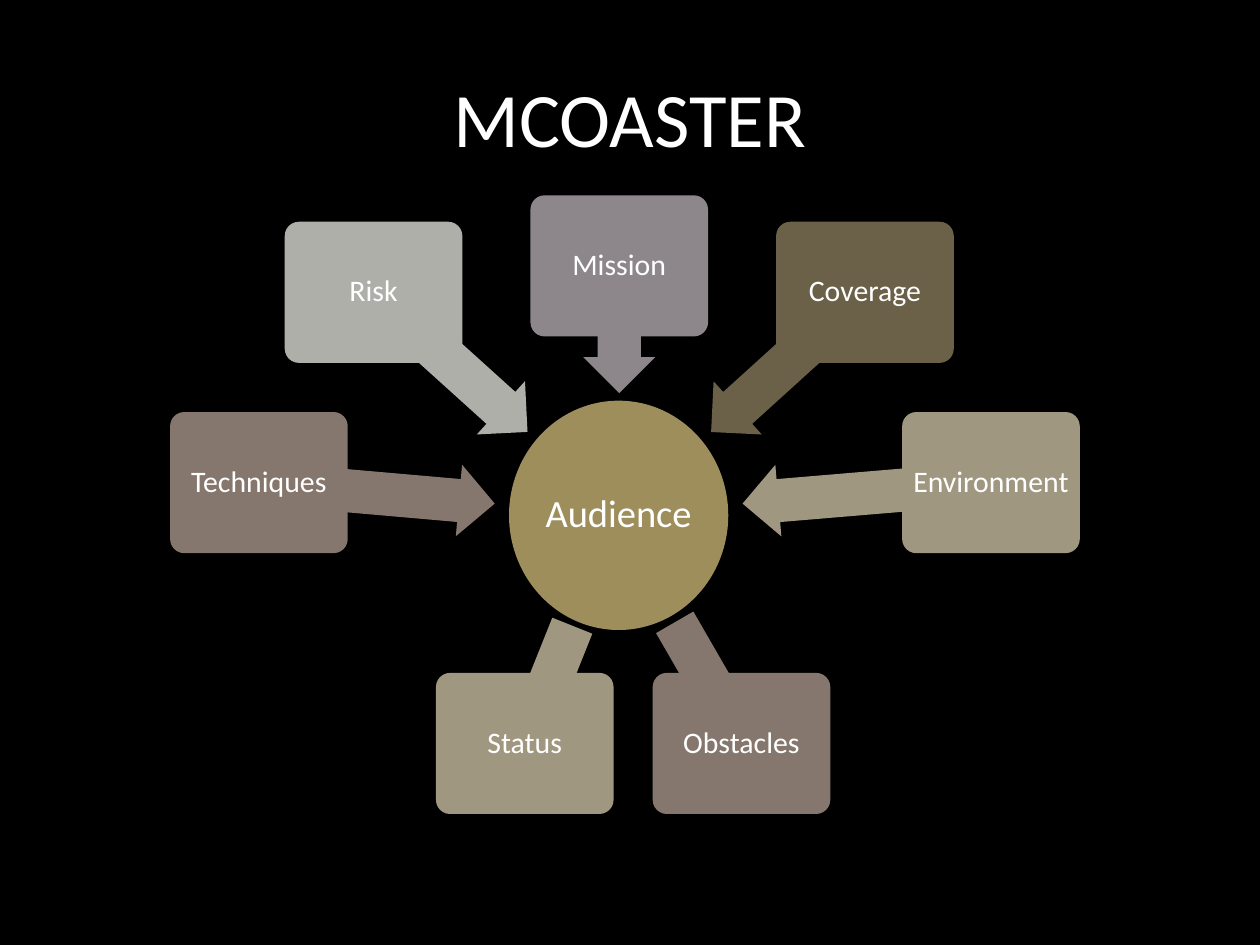
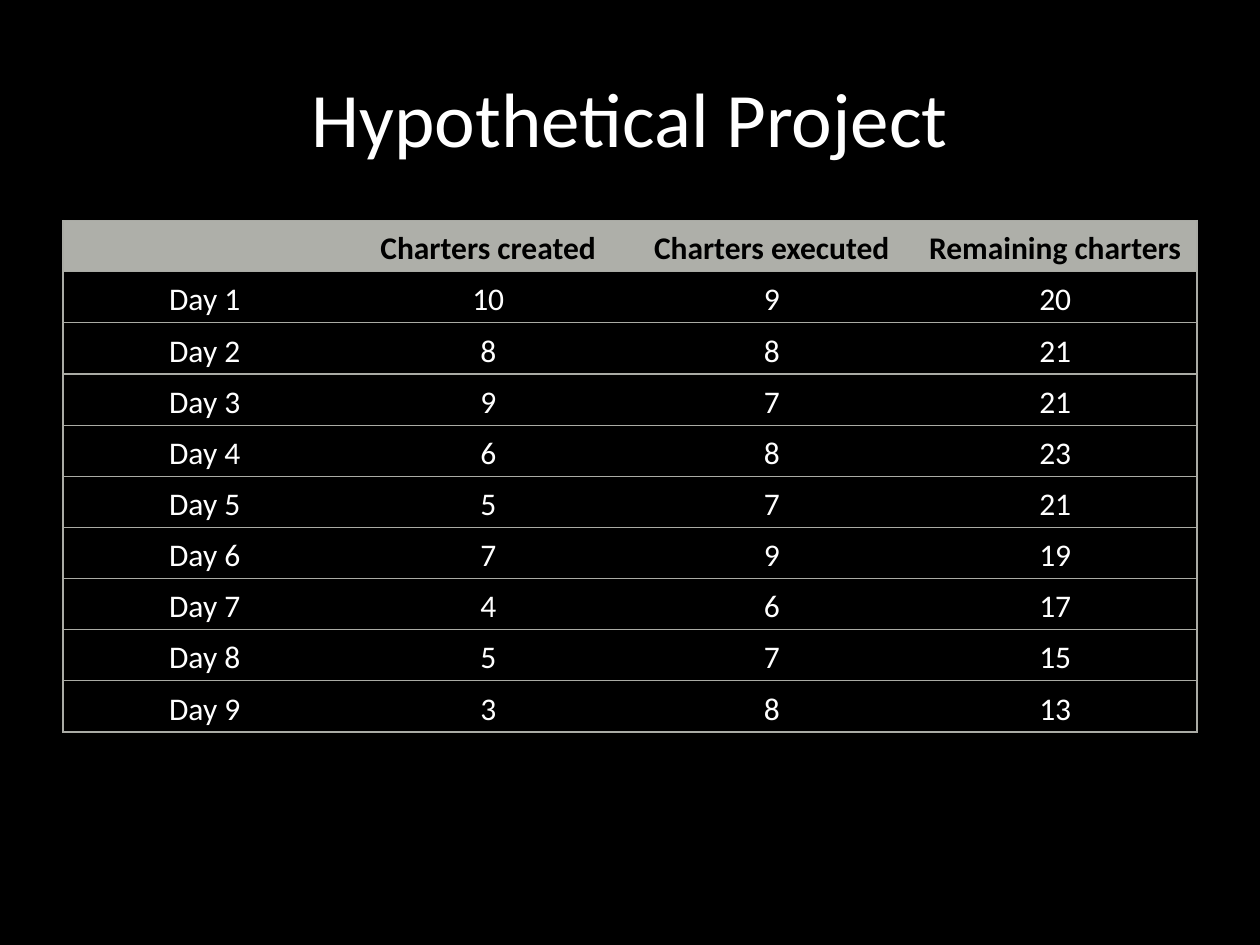
from dataclasses import dataclass

from lxml import etree
from pptx import Presentation
from pptx.dml.color import RGBColor
from pptx.enum.shapes import MSO_SHAPE
from pptx.enum.text import MSO_ANCHOR, PP_ALIGN
from pptx.oxml.ns import qn
from pptx.util import Inches, Pt

CENTER = PP_ALIGN.CENTER
MIDDLE = MSO_ANCHOR.MIDDLE
ELLIPSE = MSO_SHAPE.OVAL
ROUNDED = MSO_SHAPE.ROUNDED_RECTANGLE
LEFT_ARROW = MSO_SHAPE.LEFT_ARROW


@dataclass(frozen=True)
class Theme:
    font: str = "Calibri"
    background: str = "000000"
    light: str = "FFFFFF"
    dark: str = "000000"
    gold: str = "9E8E5C"
    sand: str = "A09781"
    taupe: str = "85776D"
    silver: str = "AEAFA9"
    mauve: str = "8D878B"
    olive: str = "6B6149"
    rule: str = "AAABA5"
    title_size: float = 44
    hub_size: float = 22
    node_size: float = 17
    table_size: float = 18
    rule_width: float = 0.75


THEME = Theme()
TITLE_BOX = (0.5, 0.3, 9, 1.25)
DIAGRAM_BOX = (1.35, 1.55, 7.22, 4.91)
TABLE_BOX = (0.5, 1.75, 9, 4.06)

# All offsets are measured from the top left corner of the diagram box.
HUB_BOX = (2.69, 1.63, 1.74, 1.82)
NODE_SIZE = (1.41, 1.12)
ARROW_HEIGHT = 0.57
# label, colour, node offset, arrow offset, arrow length, arrow rotation
NODES = [
    ("Status", THEME.sand, (2.11, 3.79), (2.5, 3.6), 1.01, 291.8),
    ("Techniques", THEME.taupe, (0, 1.72), (0.7, 2.08), 1.88, 185),
    ("Risk", THEME.silver, (0.91, 0.21), (1.4, 1.04), 1.65, 222.1),
    ("Mission", THEME.mauve, (2.86, 0), (3.06, 0.78), 1.01, 270),
    ("Coverage", THEME.olive, (4.81, 0.21), (4.08, 1.04), 1.65, 317.8),
    ("Environment", THEME.sand, (5.81, 1.72), (4.54, 2.08), 1.97, 355.2),
    ("Obstacles", THEME.taupe, (3.83, 3.79), (3.73, 3.58), 1.1, 240),
]

HEADINGS = ("", "Charters created", "Charters executed", "Remaining charters")
# created, executed, remaining
DAILY_COUNTS = [
    (10, 9, 20), (8, 8, 21), (9, 7, 21), (6, 8, 23), (5, 7, 21),
    (7, 9, 19), (4, 6, 17), (5, 7, 15), (3, 8, 13),
]


def set_attributes(target, values):
    for name, value in values.items():
        setattr(target, name, value)


def set_margins(target, margin):
    for side in ("left", "top", "right", "bottom"):
        setattr(target, f"margin_{side}", Inches(margin))


def write_text(text_frame, text, size, color=THEME.light, bold=False, spacing=1.0):
    paragraph = text_frame.paragraphs[0]
    set_attributes(paragraph, {"alignment": CENTER, "line_spacing": spacing})
    run = paragraph.add_run()
    run.text = text
    set_attributes(run.font, {"name": THEME.font, "size": Pt(size), "bold": bold})
    run.font.color.rgb = RGBColor.from_string(color)


def add_titled_slide(presentation, title):
    slide = presentation.slides.add_slide(presentation.slide_layouts[6])
    slide.background.fill.solid()
    slide.background.fill.fore_color.rgb = RGBColor.from_string(THEME.background)
    title_box = slide.shapes.add_textbox(*map(Inches, TITLE_BOX))
    set_attributes(title_box.text_frame, {"word_wrap": True, "vertical_anchor": MIDDLE})
    write_text(title_box.text_frame, title, THEME.title_size)
    return slide


def add_filled_shape(slide, kind, box, color, adjustments=()):
    shape = slide.shapes.add_shape(kind, *map(Inches, box))
    shape.shadow.inherit = False
    shape.fill.solid()
    shape.fill.fore_color.rgb = RGBColor.from_string(color)
    shape.line.fill.background()
    for index, value in enumerate(adjustments):
        shape.adjustments[index] = value
    return shape


def label_shape(shape, text, size, margin):
    set_attributes(shape.text_frame, {"word_wrap": True, "vertical_anchor": MIDDLE})
    set_margins(shape.text_frame, margin)
    write_text(shape.text_frame, text, size, spacing=0.9)


def add_hub_diagram(slide, box):
    left, top = box[:2]

    def place(offset, size):
        return (left + offset[0], top + offset[1], *size)

    hub = add_filled_shape(slide, ELLIPSE, place(HUB_BOX[:2], HUB_BOX[2:]), THEME.gold)
    label_shape(hub, "Audience", THEME.hub_size, 0.02)
    for label, color, node_offset, arrow_offset, length, rotation in NODES:
        arrow_box = place(arrow_offset, (length, ARROW_HEIGHT))
        arrow = add_filled_shape(slide, LEFT_ARROW, arrow_box, color, (0.6, 0.5))
        arrow.rotation = rotation
        node = add_filled_shape(slide, ROUNDED, place(node_offset, NODE_SIZE), color, (0.1,))
        label_shape(node, label, THEME.node_size, 0.04)


def set_borders(cell, visible_sides):
    """Rule the given sides (of L, R, T, B) and clear the others."""
    properties = cell._tc.get_or_add_tcPr()
    for position, side in enumerate("LRTB"):
        line = etree.Element(qn(f"a:ln{side}"), w=str(Pt(THEME.rule_width)))
        if side in visible_sides:
            fill = etree.SubElement(line, qn("a:solidFill"))
            etree.SubElement(fill, qn("a:srgbClr"), val=THEME.rule)
        else:
            etree.SubElement(line, qn("a:noFill"))
        properties.insert(position, line)


def add_charter_table(slide, box):
    days = [(f"Day {day}", *counts) for day, counts in enumerate(DAILY_COUNTS, 1)]
    rows = [HEADINGS, *days]
    last_column = len(HEADINGS) - 1
    table = slide.shapes.add_table(len(rows), len(HEADINGS), *map(Inches, box)).table
    table.horz_banding = False
    for row_index, row in enumerate(rows):
        is_header = row_index == 0
        for column_index, value in enumerate(row):
            cell = table.cell(row_index, column_index)
            cell.vertical_anchor = MIDDLE
            set_margins(cell, 0.01)
            cell.fill.solid()
            fill_color = THEME.silver if is_header else THEME.background
            cell.fill.fore_color.rgb = RGBColor.from_string(fill_color)
            outer_sides = {0: "L", last_column: "R"}.get(column_index, "")
            set_borders(cell, "TB" + outer_sides)
            if value != "":
                text_color = THEME.dark if is_header else THEME.light
                write_text(cell.text_frame, str(value), THEME.table_size,
                           text_color, is_header, 1.15)


def main():
    presentation = Presentation()
    set_attributes(presentation, {"slide_width": Inches(10), "slide_height": Inches(7.5)})
    add_hub_diagram(add_titled_slide(presentation, "MCOASTER"), DIAGRAM_BOX)
    add_charter_table(add_titled_slide(presentation, "Hypothetical Project"), TABLE_BOX)
    presentation.save("out.pptx")


if __name__ == "__main__":
    main()
